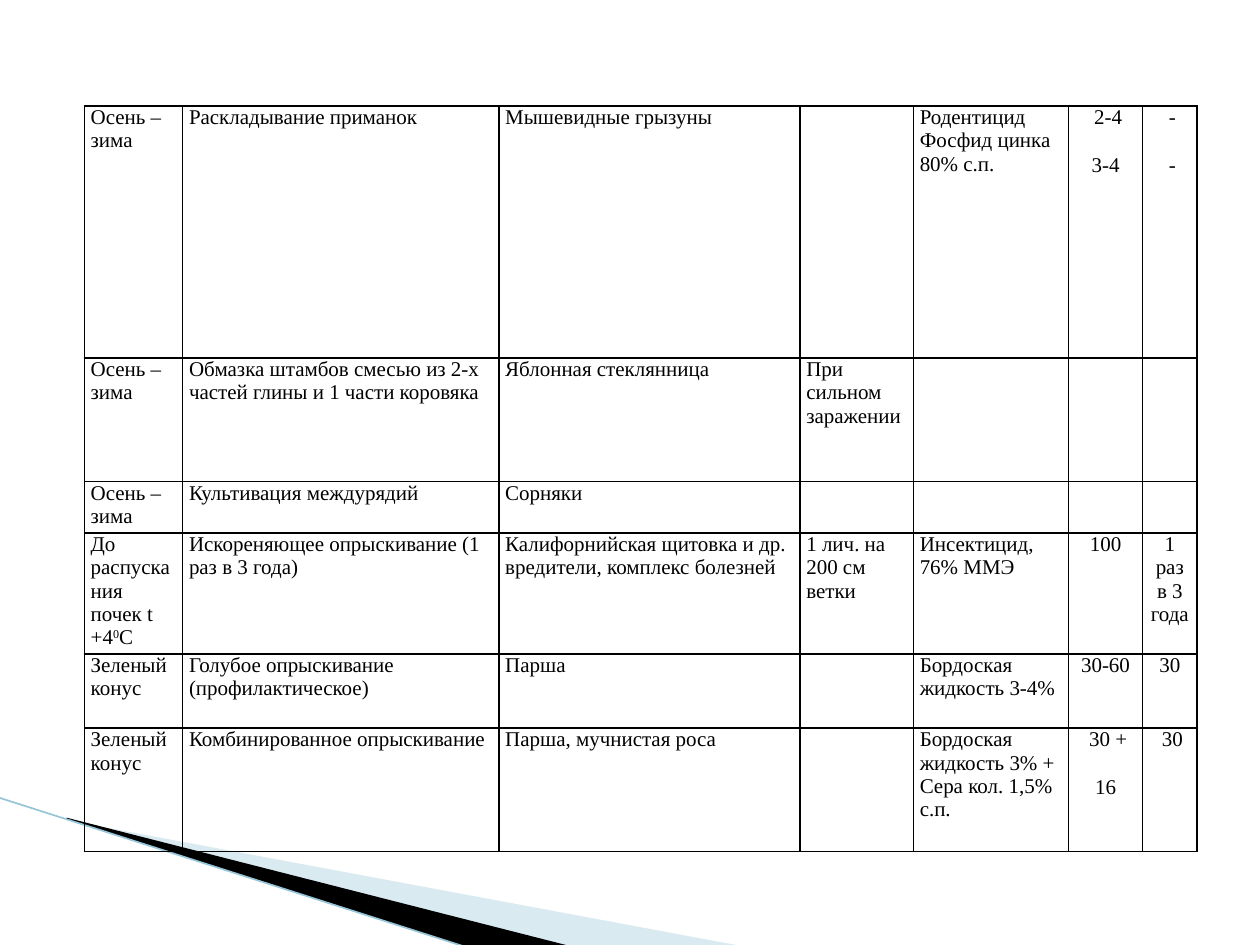
from lxml.etree import SubElement
from pptx import Presentation
from pptx.dml.color import RGBColor
from pptx.enum.shapes import MSO_CONNECTOR
from pptx.enum.text import PP_ALIGN
from pptx.oxml import parse_xml
from pptx.oxml.ns import nsdecls, qn
from pptx.util import Inches, Pt

BLACK = RGBColor(0x00, 0x00, 0x00)
PALE_BLUE = RGBColor(0xA0, 0xCB, 0xDC)
LINE_BLUE = RGBColor(0x97, 0xC5, 0xD8)

FONT = {"name": "Times New Roman", "size": Pt(12), "bold": False}
CELL_FORMAT = {
    "margin_left": Inches(0.05),
    "margin_right": Inches(0.05),
    "margin_top": 0,
    "margin_bottom": 0,
}
TABLE_FORMAT = {"first_row": False, "horz_banding": False}
LINE_GAP = Pt(13.8)

COLUMN_WIDTHS = [0.78, 2.51, 2.39, 0.9, 1.23, 0.59, 0.43]
ROW_HEIGHTS = [2, 0.98, 0.41, 0.96, 0.59, 0.98]
FIRST_CENTRED_COLUMN = 5
ROWS = [
    ["Осень – зима", "Раскладывание приманок", "Мышевидные грызуны", "",
     "Родентицид\nФосфид цинка 80% с.п.", " 2-4\n3-4", " -\n -"],
    ["Осень – зима", "Обмазка штамбов смесью из 2-х частей глины и 1 части коровяка",
     "Яблонная стеклянница", "При сильном заражении", "", "", ""],
    ["Осень – зима", "Культивация междурядий", "Сорняки", "", "", "", ""],
    ["До распускания почек t +4^0^С", "Искореняющее опрыскивание (1 раз в 3 года)",
     "Калифорнийская щитовка и др. вредители, комплекс болезней",
     "1 лич. на 200 см ветки", "Инсектицид, 76% ММЭ", "100", "1 раз в 3 года"],
    ["Зеленый конус", "Голубое опрыскивание (профилактическое)", "Парша", "",
     "Бордоская жидкость 3-4%", "30-60", "30"],
    ["Зеленый конус", "Комбинированное опрыскивание", "Парша, мучнистая роса", "",
     "Бордоская жидкость 3% +\nСера кол. 1,5% с.п.", " 30 +\n16", " 30"],
]


def apply_format(target, values):
    for name, value in values.items():
        setattr(target, name, value)


def add_wedge(page, points, color, opacity=100):
    corners = [(Inches(x), Inches(y)) for x, y in points]
    builder = page.shapes.build_freeform(*corners[0])
    builder.add_line_segments(corners[1:], close=True)
    wedge = builder.convert_to_shape()
    wedge.shadow.inherit = False
    wedge.fill.solid()
    wedge.fill.fore_color.rgb = color
    wedge.line.fill.background()
    if opacity < 100:
        tone = wedge.fill._xPr.find(qn("a:solidFill"))[0]
        SubElement(tone, qn("a:alpha")).set("val", str(opacity * 1000))


def add_corner(page, left, top, right, bottom):
    tip = left + 0.54
    add_wedge(page, [(tip, 6.51), (5.95, bottom), (4.56, bottom), (tip, 6.5)], PALE_BLUE, 40)
    add_wedge(page, [(tip, 6.49), (4.57, bottom), (right, bottom), (tip, 6.5)], BLACK)
    edge = page.shapes.add_connector(
        MSO_CONNECTOR.STRAIGHT, Inches(left), Inches(top), Inches(right), Inches(bottom)
    )
    edge.line.color.rgb = LINE_BLUE
    edge.line.width = Pt(0.95)
    SubElement(edge._element.spPr, qn("a:effectLst"))


def add_borders(cell):
    properties = cell._tc.get_or_add_tcPr()
    for side in ("lnL", "lnR", "lnT", "lnB"):
        properties.append(parse_xml(
            f'<a:{side} {nsdecls("a")} w="{Pt(1)}"><a:solidFill>'
            f'<a:srgbClr val="{BLACK}"/></a:solidFill></a:{side}>'
        ))


def fill_cell(cell, text, centred):
    apply_format(cell, CELL_FORMAT)
    add_borders(cell)
    cell.fill.background()
    for index, line in enumerate(text.split("\n")):
        para = cell.text_frame.paragraphs[0] if index == 0 else cell.text_frame.add_paragraph()
        para.alignment = PP_ALIGN.CENTER if centred else PP_ALIGN.LEFT
        if centred and index:
            para.space_before = LINE_GAP
        apply_format(para.font, FONT)
        if not line:
            continue
        for part, words in enumerate(line.split("^")):
            span = para.add_run()
            span.text = words
            apply_format(span.font, FONT)
            span.font.color.rgb = BLACK
            if part % 2:
                span.font._element.set("baseline", "30000")


def add_schedule(page, left, top, width, height):
    frame = page.shapes.add_table(
        len(ROWS), len(COLUMN_WIDTHS), Inches(left), Inches(top), Inches(width), Inches(height)
    )
    table = frame.table
    apply_format(table, TABLE_FORMAT)
    for column, size in zip(table.columns, COLUMN_WIDTHS):
        column.width = Inches(size)
    for row, size, texts in zip(table.rows, ROW_HEIGHTS, ROWS):
        row.height = Inches(size)
        for index, text in enumerate(texts):
            fill_cell(row.cells[index], text, index >= FIRST_CENTRED_COLUMN)


def main():
    deck = Presentation()
    deck.slide_width = Inches(10)
    deck.slide_height = Inches(7.5)
    page = deck.slides.add_slide(deck.slide_layouts[6])
    add_corner(page, -0.01, 6.33, 3.71, 7.52)
    add_schedule(page, 0.67, 0.84, sum(COLUMN_WIDTHS), sum(ROW_HEIGHTS))
    deck.save("out.pptx")


if __name__ == "__main__":
    main()
